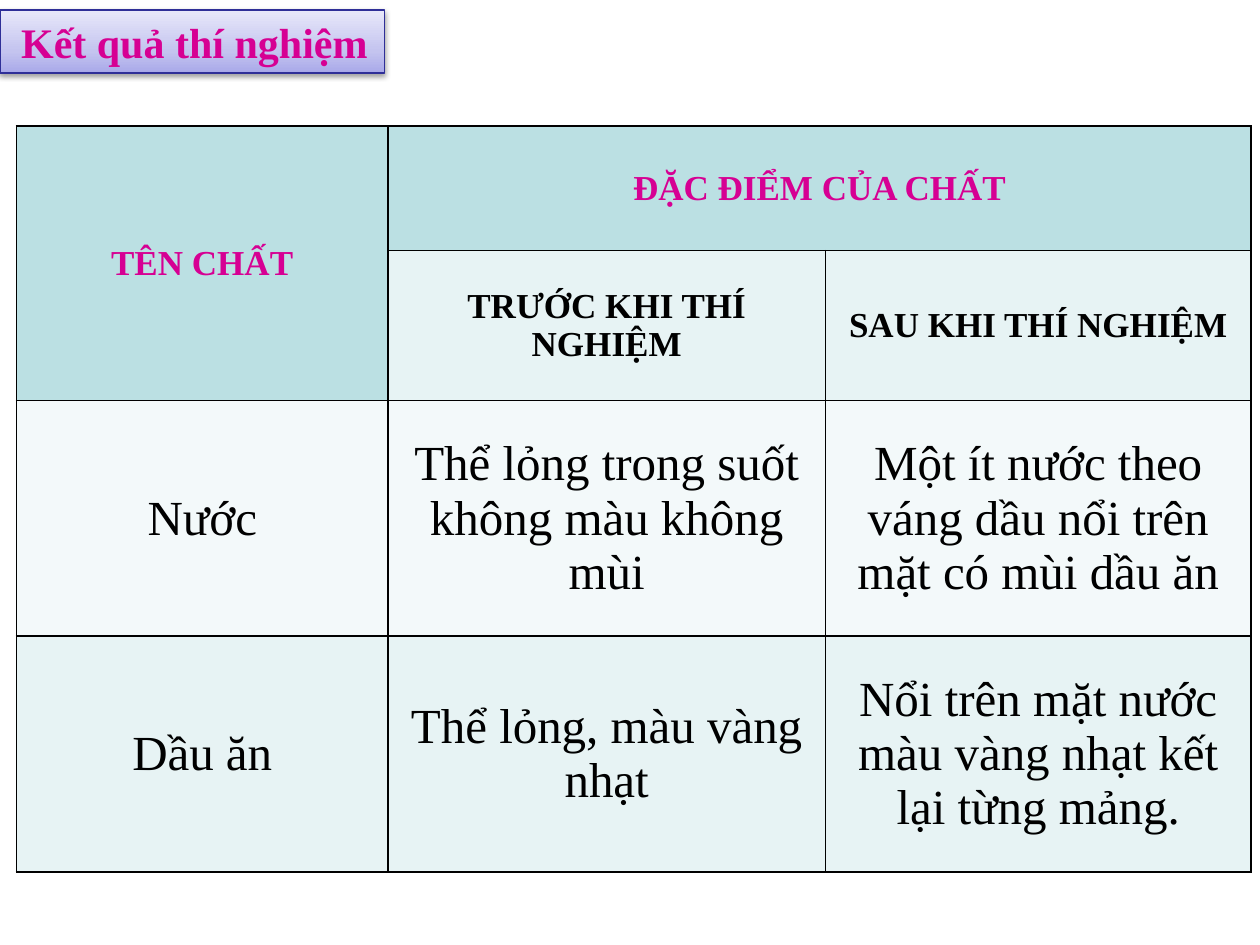
from copy import deepcopy

from lxml import etree
from pptx import Presentation
from pptx.dml.color import RGBColor
from pptx.enum.shapes import MSO_SHAPE
from pptx.enum.text import MSO_ANCHOR, MSO_AUTO_SIZE, PP_ALIGN
from pptx.oxml.ns import qn
from pptx.util import Pt

RECT = MSO_SHAPE.RECTANGLE
MIDDLE = MSO_ANCHOR.MIDDLE
GROW = MSO_AUTO_SIZE.SHAPE_TO_FIT_TEXT
LEFT, CENTER = PP_ALIGN.LEFT, PP_ALIGN.CENTER

PX = 9144  # 100 px to the inch
SERIF, SANS = "Times New Roman", "Arial"

BLACK = RGBColor(0x00, 0x00, 0x00)
PINK = RGBColor(0xD6, 0x00, 0x93)
NAVY = RGBColor(0x2F, 0x2F, 0x98)
TEAL = RGBColor(0xBB, 0xE0, 0xE3)
MIST = RGBColor(0xE7, 0xF3, 0xF4)
PALE = RGBColor(0xF3, 0xF9, 0xFA)
FADE = [(0, RGBColor(0xA9, 0xA9, 0xE9)),
        (0.35, RGBColor(0xC4, 0xC4, 0xEF)),
        (1, RGBColor(0xE8, 0xE8, 0xFA))]

COLS = [295, 347, 338]
ROWS = [99, 119, 187, 187]
# row, column, rows spanned, columns spanned, text
HEADS = [(0, 0, 2, 1, "TÊN CHẤT"),
         (0, 1, 1, 2, "ĐẶC ĐIỂM CỦA CHẤT")]
SUBS = ["TRƯỚC KHI THÍ NGHIỆM", "SAU KHI THÍ NGHIỆM"]
BODY = [["Nước", "Thể lỏng trong suốt không màu không mùi",
         "Một ít nước theo váng dầu nổi trên mặt có mùi dầu ăn"],
        ["Dầu ăn", "Thể lỏng, màu vàng nhạt",
         "Nổi trên mặt nước màu vàng nhạt kết lại từng mảng."]]


def px(*vals):
    return [v * PX for v in vals]


def add_run(para, text, size, color, bold, face=SERIF):
    run = para.add_run()
    run.text = text
    font = run.font
    font.name, font.size, font.bold = face, Pt(size), bold
    font.color.rgb = color


def add_node(parent, tag, **attrs):
    return etree.SubElement(parent, qn(tag), attrs)


def add_shade(shape):
    shape.shadow.inherit = False
    effects = shape._element.spPr.find(qn("a:effectLst"))
    shade = add_node(effects, "a:outerShdw", blurRad="40000", dist="20000",
                     dir="5400000", rotWithShape="0")
    color = add_node(shade, "a:srgbClr", val=str(BLACK))
    add_node(color, "a:alpha", val="38000")


def add_title(slide, box):
    shape = slide.shapes.add_shape(RECT, *px(*box))
    # Gradient from bottom to top, with a third stop
    shape.fill.gradient()
    shape.fill.gradient_angle = 90
    stop = shape._element.spPr.find(".//" + qn("a:gs"))
    stop.addnext(deepcopy(stop))
    for item, (pos, color) in zip(shape.fill.gradient_stops, FADE):
        item.position = pos
        item.color.rgb = color
    shape.line.color.rgb = NAVY
    shape.line.width = Pt(0.75)
    add_shade(shape)

    frame = shape.text_frame
    frame.word_wrap = False
    frame.auto_size = GROW
    para = frame.paragraphs[0]
    para.alignment = LEFT
    add_run(para, " ", 18, BLACK, True, SANS)
    add_run(para, "Kết quả thí nghiệm", 24, PINK, True)


def add_edges(cell):
    props = cell._tc.get_or_add_tcPr()
    for i, side in enumerate(("a:lnL", "a:lnR", "a:lnT", "a:lnB")):
        edge = etree.Element(qn(side), w=str(Pt(1)))
        fill = add_node(edge, "a:solidFill")
        add_node(fill, "a:srgbClr", val=str(BLACK))
        props.insert(i, edge)


def fill_cell(cell, text, size, color, bold, back):
    cell.fill.solid()
    cell.fill.fore_color.rgb = back
    cell.vertical_anchor = MIDDLE
    para = cell.text_frame.paragraphs[0]
    para.alignment = CENTER
    add_run(para, text, size, color, bold)


def add_grid(slide, left, top):
    box = px(left, top, sum(COLS), sum(ROWS))
    grid = slide.shapes.add_table(len(ROWS), len(COLS), *box).table
    for col, wide in zip(grid.columns, COLS):
        col.width = wide * PX
    for row, high in zip(grid.rows, ROWS):
        row.height = high * PX
    for cell in grid.iter_cells():
        add_edges(cell)

    # Merged heads
    for r, c, down, over, text in HEADS:
        cell = grid.cell(r, c)
        cell.merge(grid.cell(r + down - 1, c + over - 1))
        fill_cell(cell, text, 20, PINK, True, TEAL)
    # Second head row
    for c, text in enumerate(SUBS, 1):
        fill_cell(grid.cell(1, c), text, 20, BLACK, True, MIST)
    # Results
    for r, (line, back) in enumerate(zip(BODY, (PALE, MIST)), 2):
        for c, text in enumerate(line):
            fill_cell(grid.cell(r, c), text, 28, BLACK, False, back)


def main():
    deck = Presentation()
    deck.slide_width, deck.slide_height = px(1000, 750)
    slide = deck.slides.add_slide(deck.slide_layouts[6])
    add_title(slide, (0, 8, 305, 50))
    add_grid(slide, 13, 100)
    deck.save("out.pptx")


if __name__ == "__main__":
    main()
